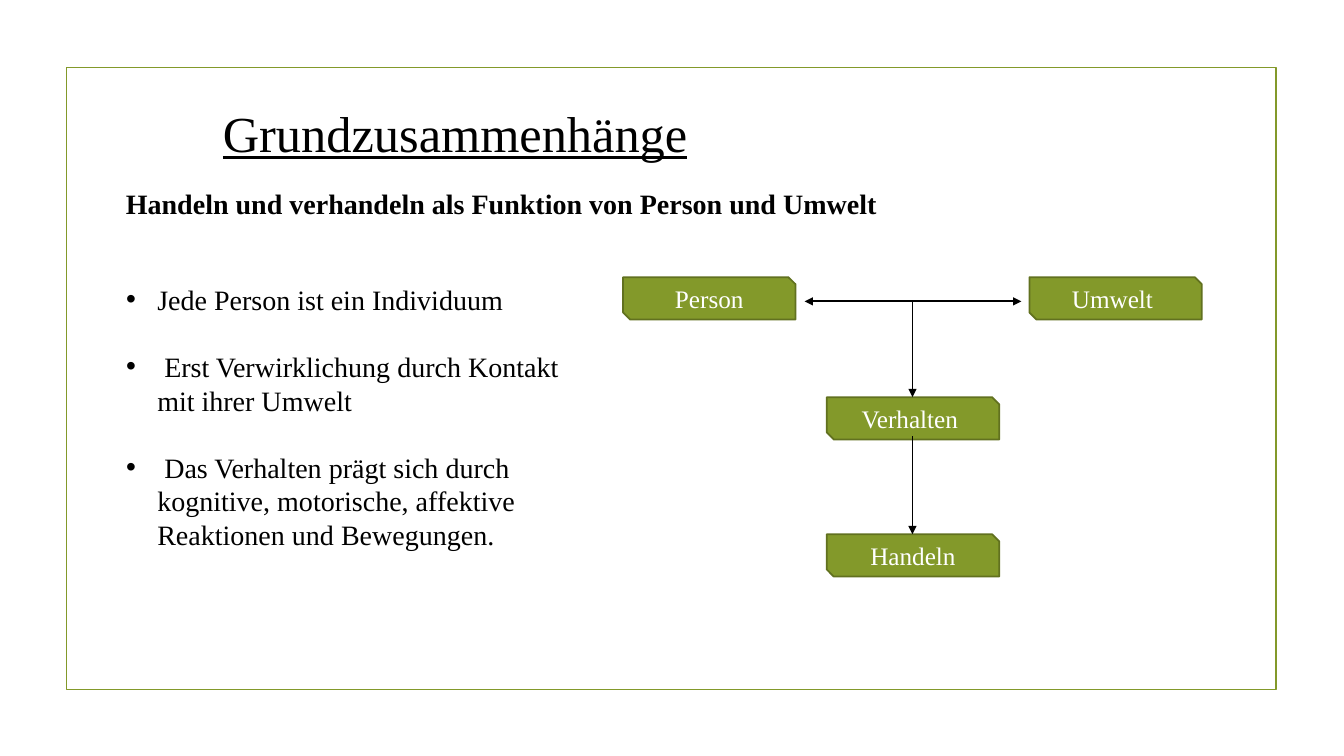
from lxml import etree
from pptx import Presentation
from pptx.dml.color import RGBColor
from pptx.enum import shapes, text
from pptx.oxml.ns import qn
from pptx.util import Inches, Pt

GREEN, DARK_GREEN, BLACK, WHITE = "83992A", "61711F", "000000", "FFFFFF"


def color(hex_code):
    return RGBColor.from_string(hex_code)


def style(p, size, hex_code, bold=False, underline=False):
    for r in p.runs:
        f = r.font
        f.name, f.size, f.bold, f.underline = "Times New Roman", Pt(size), bold, underline
        f.color.rgb = color(hex_code)


prs = Presentation()
prs.slide_width, prs.slide_height = Inches(13.33), Inches(7.5)
s = prs.slides.add_slide(prs.slide_layouts[1])

# Frame
frame = s.shapes.add_shape(shapes.MSO_SHAPE.RECTANGLE,
                           Inches(0.66), Inches(0.67), Inches(12), Inches(6.17))
frame.shadow.inherit = False
frame.fill.background()
frame.line.color.rgb = color(GREEN)
frame.line.width = Pt(1.25)

# Title, subtitle and bullet list
title, body = s.shapes.title, s.placeholders[1]
subtitle = s.shapes.add_textbox(0, 0, 0, 0)
for sp, x, y, w, h in [(title, 2.11, 0.96, 6.09, 0.71),
                       (subtitle, 1.15, 1.8, 10.9, 0.44),
                       (body, 1.15, 2.75, 4.85, 3.21)]:
    sp.left, sp.top, sp.width, sp.height = Inches(x), Inches(y), Inches(w), Inches(h)
    tf = sp.text_frame
    tf.word_wrap = True
    tf.auto_size = text.MSO_AUTO_SIZE.NONE
    tf.vertical_anchor = text.MSO_ANCHOR.TOP

title.text_frame.text = "Grundzusammenhänge"
p = title.text_frame.paragraphs[0]
p.alignment = text.PP_ALIGN.LEFT
style(p, 36, BLACK, underline=True)

subtitle.text_frame.text = "Handeln und verhandeln als Funktion von Person und Umwelt"
style(subtitle.text_frame.paragraphs[0], 20, BLACK, bold=True)

bullets = ["Jede Person ist ein Individuum",
           " Erst Verwirklichung durch Kontakt mit ihrer Umwelt",
           " Das Verhalten prägt sich durch kognitive, motorische, affektive "
           "Reaktionen und Bewegungen."]
body.text_frame.text = "\n".join(bullets)
for i, p in enumerate(body.text_frame.paragraphs):
    pPr = p._p.get_or_add_pPr()
    pPr.set("marL", str(Inches(0.31)))
    pPr.set("indent", str(-Inches(0.31)))
    etree.SubElement(pPr, qn("a:buFont")).set("typeface", "Arial")
    etree.SubElement(pPr, qn("a:buChar")).set("char", "•")
    p.space_before = Pt(24 if i else 0)
    style(p, 20, BLACK)

# Diagram boxes
for label, x, y in [("Person", 6.18, 2.75), ("Umwelt ", 10.21, 2.75),
                    ("Verhalten ", 8.2, 3.94), ("Handeln", 8.2, 5.3)]:
    sp = s.shapes.add_shape(shapes.MSO_SHAPE.SNIP_2_DIAG_RECTANGLE,
                            Inches(x), Inches(y), Inches(1.71), Inches(0.42))
    sp.shadow.inherit = False
    sp.fill.solid()
    sp.fill.fore_color.rgb = color(GREEN)
    sp.line.color.rgb = color(DARK_GREEN)
    sp.line.width = Pt(1.25)
    tf = sp.text_frame
    tf.text = label
    tf.vertical_anchor = text.MSO_ANCHOR.MIDDLE
    p = tf.paragraphs[0]
    p.alignment = text.PP_ALIGN.CENTER
    style(p, 18, WHITE)

# Arrows
for x1, y1, x2, y2, ends in [(7.98, 2.99, 10.13, 2.99, ["headEnd", "tailEnd"]),
                             (9.05, 2.99, 9.05, 3.94, ["tailEnd"]),
                             (9.05, 4.33, 9.05, 5.3, ["tailEnd"])]:
    arrow = s.shapes.add_connector(shapes.MSO_CONNECTOR.STRAIGHT,
                                   Inches(x1), Inches(y1), Inches(x2), Inches(y2))
    arrow.line.color.rgb = color(BLACK)
    arrow.line.width = Pt(1.25)
    for end in ends:
        etree.SubElement(arrow.line._get_or_add_ln(), qn(f"a:{end}")).set("type", "triangle")
    etree.SubElement(arrow._element.spPr, qn("a:effectLst"))

prs.save("out.pptx")
